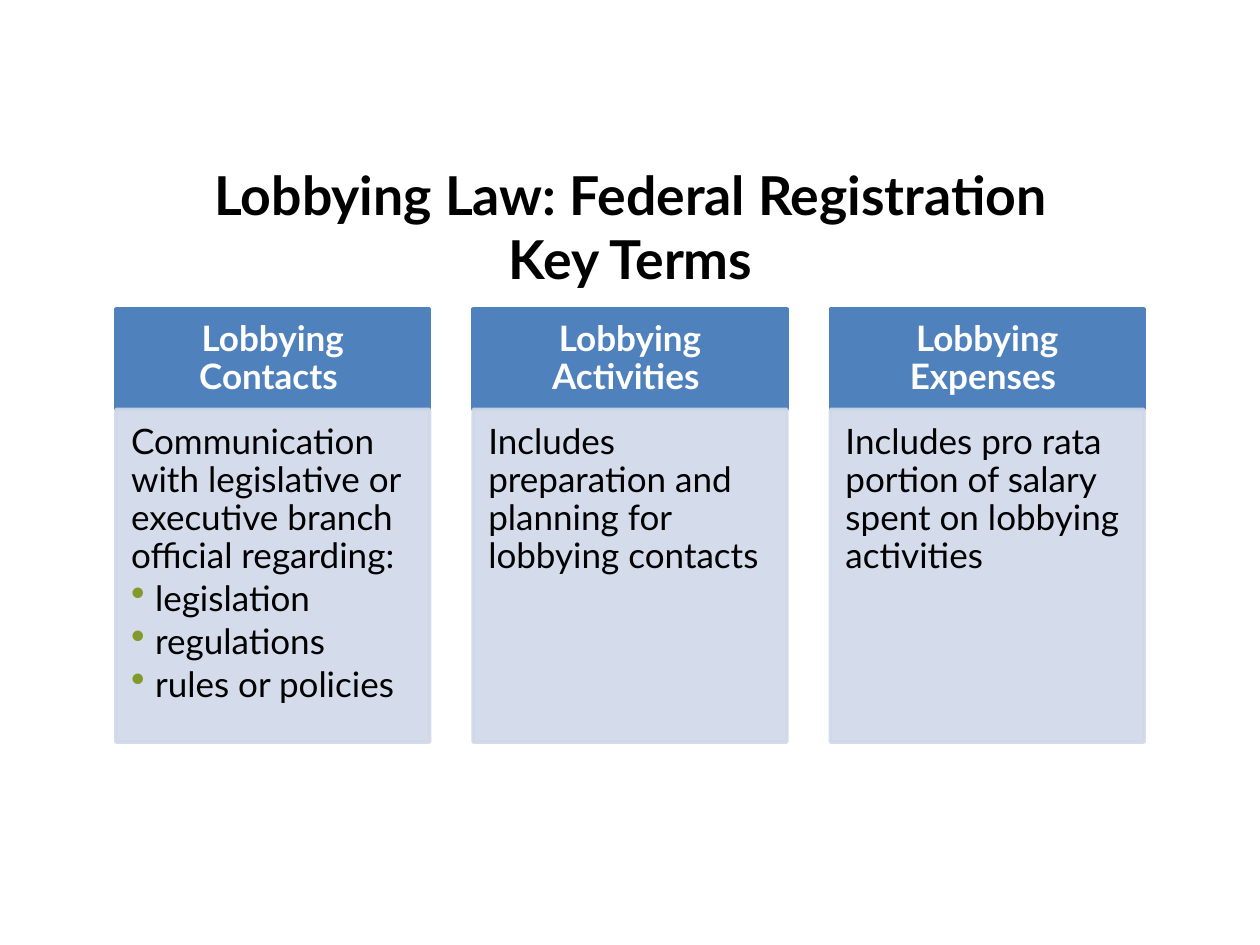
"""Build a slide of three key-term cards on federal lobbying registration."""
from lxml.etree import SubElement
from pptx import Presentation
from pptx.dml.color import RGBColor
from pptx.enum.shapes import MSO_SHAPE
from pptx.enum.text import MSO_ANCHOR, PP_ALIGN
from pptx.oxml.ns import qn
from pptx.util import Inches, Pt

BLACK = RGBColor(0x00, 0x00, 0x00)
WHITE = RGBColor(0xFF, 0xFF, 0xFF)
BLUE = RGBColor(0x4F, 0x81, 0xBD)
PALE_BLUE = RGBColor(0xD0, 0xD8, 0xE8)
GREEN = RGBColor(0x83, 0x99, 0x2A)

LEFT, CARD_WIDTH, COLUMN_STEP = 0.92, 2.49, 2.835
HEADER_TOP, HEADER_HEIGHT, BODY_HEIGHT = 2.45, 0.8, 2.64

CARDS = [
    ("Lobbying Contacts ",
     "Communication with legislative or executive branch official regarding:",
     ["legislation", "regulations", "rules or policies"]),
    ("Lobbying Activities ",
     "Includes preparation and planning for lobbying contacts", []),
    ("Lobbying Expenses ",
     "Includes pro rata portion of salary spent on lobbying activities", []),
]


def add_span(para, text, size, color, bold=False):
    span = para.add_run()
    span.text = text
    span.font.name = "Lato"
    span.font.size = Pt(size)
    span.font.bold = bold
    span.font.color.rgb = color


def add_panel(left, top, height, color, insets, anchor):
    panel = slide.shapes.add_shape(
        MSO_SHAPE.RECTANGLE, Inches(left), Inches(top), Inches(CARD_WIDTH), Inches(height))
    panel.shadow.inherit = False
    panel.fill.solid()
    panel.fill.fore_color.rgb = color
    panel.line.color.rgb = color
    panel.line.width = Pt(2)
    frame = panel.text_frame
    frame.word_wrap = True
    frame.vertical_anchor = anchor
    frame.margin_left, frame.margin_top, frame.margin_right, frame.margin_bottom = map(Inches, insets)
    return panel


deck = Presentation()
deck.slide_width, deck.slide_height = Inches(10), Inches(7.5)
slide = deck.slides.add_slide(deck.slide_layouts[6])

title = slide.shapes.add_textbox(Inches(LEFT), Inches(1.42), Inches(8.17), Inches(0.75))
title.text_frame.word_wrap = True
title.text_frame.vertical_anchor = MSO_ANCHOR.MIDDLE
para = title.text_frame.paragraphs[0]
para.alignment = PP_ALIGN.CENTER
add_span(para, "Lobbying Law: Federal Registration", 30.6, BLACK, True)
para.add_line_break()
add_span(para, "Key Terms", 30.6, BLACK, True)

for column, (heading, summary, bullets) in enumerate(CARDS):
    left = LEFT + column * COLUMN_STEP
    header = add_panel(left, HEADER_TOP, HEADER_HEIGHT, BLUE,
                       (0.16, 0.09, 0.16, 0.09), MSO_ANCHOR.MIDDLE)
    para = header.text_frame.paragraphs[0]
    para.alignment = PP_ALIGN.CENTER
    para.line_spacing = 0.9
    add_span(para, heading, 20, WHITE, True)

    body = add_panel(left, HEADER_TOP + HEADER_HEIGHT, BODY_HEIGHT, PALE_BLUE,
                     (0.12, 0.12, 0.16, 0.17), MSO_ANCHOR.TOP)
    for color_element in body.element.spPr.iter(qn("a:srgbClr")):
        SubElement(color_element, qn("a:alpha"), val="90000")
    for index, text in enumerate([summary] + bullets):
        frame = body.text_frame
        para = frame.add_paragraph() if index else frame.paragraphs[0]
        para.alignment = PP_ALIGN.LEFT
        para.line_spacing = 0.9
        para.space_after = Pt(3)
        if index:
            properties = para._p.get_or_add_pPr()
            properties.set("marL", str(Inches(0.19)))
            properties.set("indent", str(-Inches(0.19)))
            bullet_color = SubElement(properties, qn("a:buClr"))
            SubElement(bullet_color, qn("a:srgbClr"), val=str(GREEN))
            SubElement(properties, qn("a:buSzPct"), val="115000")
            SubElement(properties, qn("a:buChar"), char="•")
        add_span(para, text, 20, BLACK)

deck.save("out.pptx")
